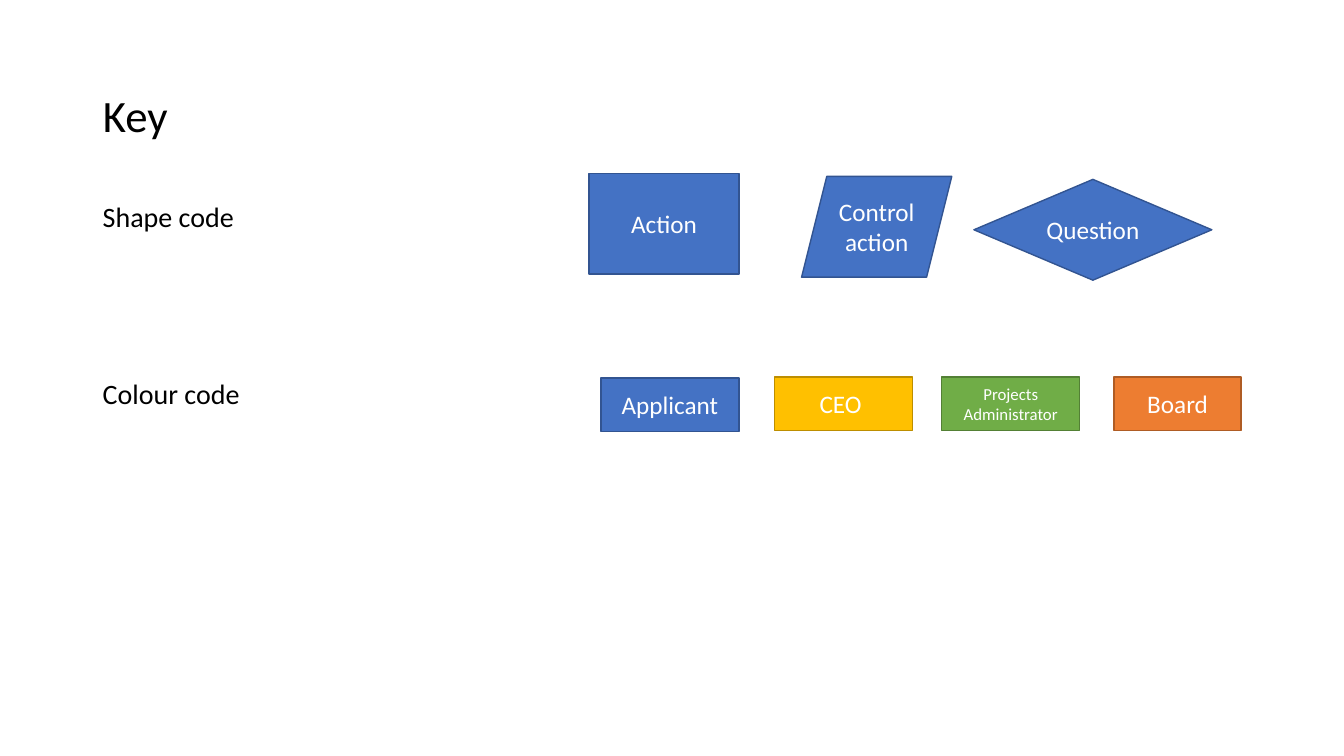
from pptx import Presentation
from pptx.dml.color import RGBColor
from pptx.enum.shapes import MSO_SHAPE
from pptx.enum.text import MSO_ANCHOR, MSO_AUTO_SIZE, PP_ALIGN
from pptx.util import Inches, Pt

BLACK = RGBColor(0x00, 0x00, 0x00)
WHITE = RGBColor(0xFF, 0xFF, 0xFF)
BLUE, BLUE_EDGE = RGBColor(0x44, 0x72, 0xC4), RGBColor(0x32, 0x54, 0x91)
GOLD, GOLD_EDGE = RGBColor(0xFF, 0xC0, 0x00), RGBColor(0xBD, 0x8E, 0x00)
GREEN, GREEN_EDGE = RGBColor(0x70, 0xAD, 0x47), RGBColor(0x53, 0x80, 0x35)
ORANGE, ORANGE_EDGE = RGBColor(0xED, 0x7D, 0x31), RGBColor(0xAF, 0x5C, 0x24)


class KeySlide:
    """Holds the style and the slide that shows the key."""

    font = "Calibri"

    def __init__(self, deck):
        self.slide = deck.slides.add_slide(deck.slide_layouts[5])

    def add_words(self, paragraph, words, size, color, align):
        paragraph.alignment = align
        run = paragraph.add_run()
        run.text = words
        run.font.name = self.font
        run.font.size = Pt(size)
        run.font.color.rgb = color

    def title(self, words, left, top, width, height):
        heading = self.slide.shapes.title
        heading.left, heading.top = Inches(left), Inches(top)
        heading.width, heading.height = Inches(width), Inches(height)
        frame = heading.text_frame
        frame.auto_size = MSO_AUTO_SIZE.NONE
        frame.vertical_anchor = MSO_ANCHOR.BOTTOM
        frame.paragraphs[0].line_spacing = 0.9
        self.add_words(frame.paragraphs[0], words, 32, BLACK, PP_ALIGN.LEFT)

    def labels(self, lines, gap, left, top, width, height):
        box = self.slide.shapes.add_textbox(
            Inches(left), Inches(top), Inches(width), Inches(height))
        frame = box.text_frame
        frame.word_wrap = True
        for number, words in enumerate(lines):
            paragraph = frame.add_paragraph() if number else frame.paragraphs[0]
            paragraph.line_spacing = 0.9
            paragraph.space_before = Pt(gap if number else 0)
            self.add_words(paragraph, words, 20, BLACK, PP_ALIGN.LEFT)

    def symbol(self, outline, words, left, top, width, height,
               fill=BLUE, edge=BLUE_EDGE, size=18):
        symbol = self.slide.shapes.add_shape(
            outline, Inches(left), Inches(top), Inches(width), Inches(height))
        symbol.shadow.inherit = False
        symbol.fill.solid()
        symbol.fill.fore_color.rgb = fill
        symbol.line.color.rgb = edge
        symbol.line.width = Pt(1)
        frame = symbol.text_frame
        frame.word_wrap = True
        frame.vertical_anchor = MSO_ANCHOR.MIDDLE
        self.add_words(frame.paragraphs[0], words, size, WHITE, PP_ALIGN.CENTER)


def main():
    deck = Presentation()
    deck.slide_width, deck.slide_height = Inches(13.33), Inches(7.5)
    key = KeySlide(deck)

    # Heading and row labels
    key.title("Key", 0.92, 0.5, 4.3, 0.96)
    key.labels(["Shape code", "Colour code"], 104.4, 0.92, 1.97, 4.3, 4.45)

    # Shape code
    for outline, meaning, left, top, width in (
        (MSO_SHAPE.RECTANGLE, "Action", 5.84, 1.72, 1.49),
        (MSO_SHAPE.PARALLELOGRAM, "Control action", 7.95, 1.75, 1.49),
        (MSO_SHAPE.DIAMOND, "Question", 9.66, 1.78, 2.36),
    ):
        key.symbol(outline, meaning, left, top, width, 1)

    # Colour code
    for role, left, top, width, fill, edge, size in (
        ("Applicant", 5.96, 3.75, 1.37, BLUE, BLUE_EDGE, 18),
        ("CEO ", 7.68, 3.74, 1.37, GOLD, GOLD_EDGE, 18),
        ("Projects Administrator", 9.34, 3.74, 1.37, GREEN, GREEN_EDGE, 12),
        ("Board", 11.05, 3.74, 1.26, ORANGE, ORANGE_EDGE, 18),
    ):
        key.symbol(MSO_SHAPE.RECTANGLE, role, left, top, width, 0.53,
                   fill, edge, size)

    deck.save("out.pptx")


if __name__ == "__main__":
    main()
